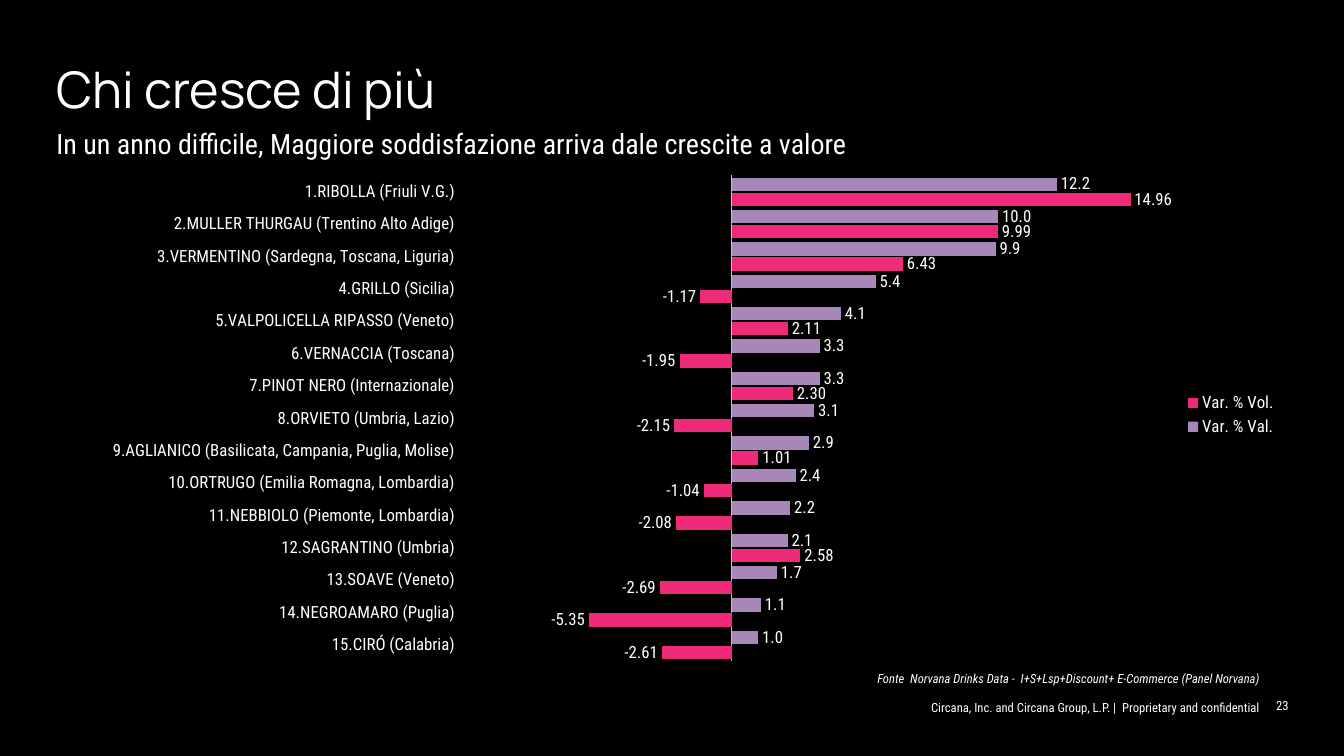
from lxml import etree
from pptx import Presentation
from pptx.chart.data import CategoryChartData
from pptx.dml.color import RGBColor
from pptx.enum.chart import (XL_CHART_TYPE, XL_LABEL_POSITION, XL_LEGEND_POSITION,
                             XL_TICK_LABEL_POSITION, XL_TICK_MARK)
from pptx.enum.text import MSO_ANCHOR, PP_ALIGN
from pptx.oxml.ns import qn
from pptx.util import Pt

PX = 9144  # 100 px to the inch
BLACK = RGBColor(0x00, 0x00, 0x00)
WHITE = RGBColor(0xFF, 0xFF, 0xFF)
GREY = RGBColor(0xBF, 0xBF, 0xBF)
LILAC = RGBColor(0xA6, 0x87, 0xB7)
PINK = RGBColor(0xEF, 0x2A, 0x79)
HEAD = "Manrope"
BODY = "Roboto Condensed"

BARS = XL_CHART_TYPE.BAR_CLUSTERED
OUTSIDE = XL_LABEL_POSITION.OUTSIDE_END
RIGHT = XL_LEGEND_POSITION.RIGHT
LOW = XL_TICK_LABEL_POSITION.LOW
NO_TICK = XL_TICK_MARK.NONE
TOP, BOTTOM = MSO_ANCHOR.TOP, MSO_ANCHOR.BOTTOM
AL_LEFT, AL_RIGHT = PP_ALIGN.LEFT, PP_ALIGN.RIGHT

WINES = [
    ("1.RIBOLLA (Friuli V.G.)", 12.2, 14.96),
    ("2.MULLER THURGAU (Trentino Alto Adige)", 10.0, 9.99),
    ("3.VERMENTINO (Sardegna, Toscana, Liguria)", 9.9, 6.43),
    ("4.GRILLO (Sicilia)", 5.4, -1.17),
    ("5.VALPOLICELLA RIPASSO (Veneto)", 4.1, 2.11),
    ("6.VERNACCIA (Toscana)", 3.3, -1.95),
    ("7.PINOT NERO (Internazionale)", 3.3, 2.30),
    ("8.ORVIETO (Umbria, Lazio)", 3.1, -2.15),
    ("9.AGLIANICO (Basilicata, Campania, Puglia, Molise)", 2.9, 1.01),
    ("10.ORTRUGO (Emilia Romagna, Lombardia)", 2.4, -1.04),
    ("11.NEBBIOLO (Piemonte, Lombardia)", 2.2, -2.08),
    ("12.SAGRANTINO (Umbria)", 2.1, 2.58),
    ("13.SOAVE (Veneto)", 1.7, -2.69),
    ("14.NEGROAMARO (Puglia)", 1.1, -5.35),
    ("15.CIRÓ (Calabria)", 1.0, -2.61),
]
SERIES = [("Var. % Val.", LILAC, "#,##0.0"), ("Var. % Vol.", PINK, "#,##0.00")]
PLOT = {"x": 0.416, "y": 0.03, "w": 0.568, "h": 0.954}


class Page:
    def __init__(self, deck):
        self.slide = deck.slides.add_slide(deck.slide_layouts[6])
        fill = self.slide.background.fill
        fill.solid()
        fill.fore_color.rgb = BLACK

    def style(self, font, size, face=BODY):
        font.size = Pt(size)
        font.name = face
        font.color.rgb = WHITE

    def text(self, box, words, size, face=BODY, align=AL_LEFT, anchor=TOP, slant=False):
        frame = self.slide.shapes.add_textbox(*(n * PX for n in box)).text_frame
        frame.word_wrap = True
        frame.vertical_anchor = anchor
        frame.margin_left = frame.margin_right = 0
        frame.margin_top = frame.margin_bottom = 0
        frame.text = words
        para = frame.paragraphs[0]
        para.alignment = align
        para.line_spacing = 0.9
        font = para.runs[0].font
        self.style(font, size, face)
        font.italic = slant

    def chart(self, box, rows, series, span):
        names, *cols = zip(*rows)
        data = CategoryChartData()
        data.categories = names
        for (name, _, mask), vals in zip(series, cols):
            data.add_series(name, vals, mask)
        chart = self.slide.shapes.add_chart(BARS, *(n * PX for n in box), data).chart
        chart.has_title = False
        self.style(chart.font, 12)
        chart.has_legend = True
        chart.legend.position = RIGHT
        chart.legend.include_in_layout = False
        self.style(chart.legend.font, 12)
        self.axes(chart, span)
        self.bars(chart.plots[0], series)
        self.place(chart, PLOT)

    def axes(self, chart, span):
        cat, val = chart.category_axis, chart.value_axis
        cat.reverse_order = True
        cat.tick_label_position = LOW
        cat.major_tick_mark = cat.minor_tick_mark = NO_TICK
        cat.has_major_gridlines = val.has_major_gridlines = False
        cat.format.line.color.rgb = GREY
        cat.format.line.width = Pt(0.75)
        self.style(cat.tick_labels.font, 12)
        val.minimum_scale, val.maximum_scale = span
        val.visible = False

    def bars(self, plot, series):
        plot.vary_by_categories = False
        plot.gap_width = 30
        plot.overlap = -13
        for bar, (_, color, mask) in zip(plot.series, series):
            bar.invert_if_negative = False
            bar.format.fill.solid()
            bar.format.fill.fore_color.rgb = color
            tags = bar.data_labels
            tags.show_value = True
            tags.position = OUTSIDE
            tags.number_format = mask
            tags.number_format_is_linked = False
            self.style(tags.font, 12)

    def place(self, chart, plot):
        """Fix the inner plot area as fractions of the chart."""
        area = chart.element.find(".//" + qn("c:plotArea"))
        for old in area.findall(qn("c:layout")):
            area.remove(old)
        layout = etree.Element(qn("c:layout"))
        area.insert(0, layout)
        manual = etree.SubElement(layout, qn("c:manualLayout"))
        parts = [("layoutTarget", "inner"), ("xMode", "edge"), ("yMode", "edge")]
        for tag, val in parts + list(plot.items()):
            etree.SubElement(manual, qn("c:" + tag)).set("val", str(val))


def main():
    deck = Presentation()
    deck.slide_width, deck.slide_height = 1333 * PX, 750 * PX
    page = Page(deck)
    page.text((56, 64, 1223, 60), "Chi cresce di più", 36, HEAD)
    page.text((56, 129, 1223, 50),
              "In un anno difficile, Maggiore soddisfazione arriva dale crescite a valore", 20)
    page.chart((-120, 159, 1397, 505), WINES, SERIES, (-10, 20))
    page.text((714, 663, 535, 18),
              "Fonte  Norvana Drinks Data -  I+S+Lsp+Discount+ E-Commerce (Panel Norvana)",
              9, align=AL_RIGHT, anchor=BOTTOM, slant=True)
    page.text((829, 690, 420, 20),
              "Circana, Inc. and Circana Group, L.P. |  Proprietary and confidential",
              9, align=AL_RIGHT, anchor=BOTTOM)
    page.text((1262, 690, 16, 18), "23", 9, align=AL_RIGHT, anchor=BOTTOM)
    deck.save("out.pptx")


if __name__ == "__main__":
    main()
